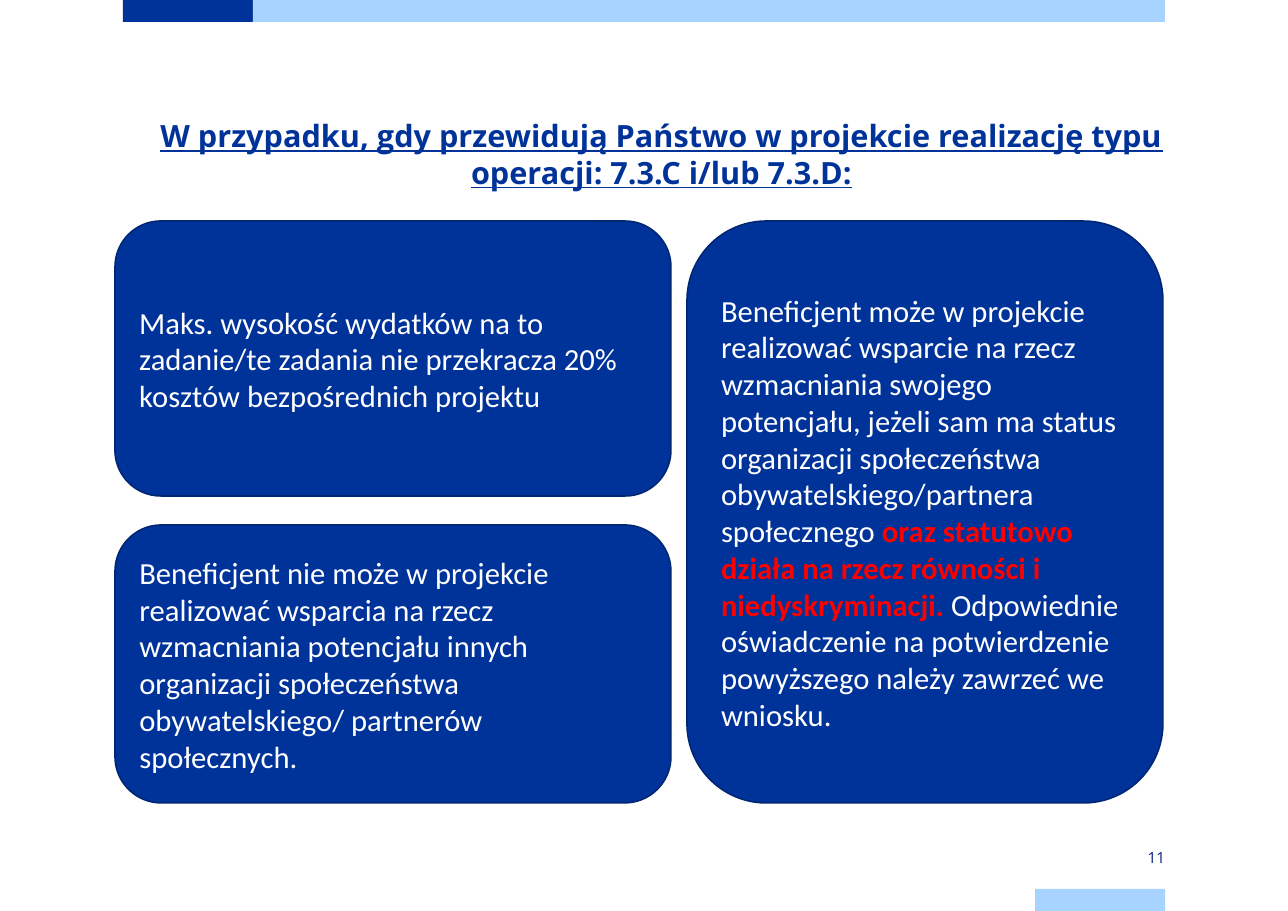
from pptx import Presentation
from pptx.dml.color import RGBColor
from pptx.enum.shapes import MSO_SHAPE
from pptx.enum.text import MSO_ANCHOR, MSO_AUTO_SIZE, PP_ALIGN
from pptx.util import Pt

RECT = MSO_SHAPE.RECTANGLE
ROUNDED = MSO_SHAPE.ROUNDED_RECTANGLE
TOP, MIDDLE = MSO_ANCHOR.TOP, MSO_ANCHOR.MIDDLE
LEFT, CENTER, RIGHT = PP_ALIGN.LEFT, PP_ALIGN.CENTER, PP_ALIGN.RIGHT

NAVY = RGBColor(0x00, 0x33, 0x99)
DARK_NAVY = RGBColor(0x00, 0x26, 0x71)
NUMBER_BLUE = RGBColor(0x00, 0x20, 0x73)
LIGHT_BLUE = RGBColor(0xA6, 0xD3, 0xFF)
WHITE = RGBColor(0xFF, 0xFF, 0xFF)
RED = RGBColor(0xFF, 0x00, 0x00)

PX = 8298  # EMU per pixel


def px(*lengths):
    return [n * PX for n in lengths]


def add_filled(kind, box, color):
    sp = slide.shapes.add_shape(kind, *px(*box))
    sp.shadow.inherit = False
    sp.fill.solid()
    sp.fill.fore_color.rgb = color
    sp.line.fill.background()
    return sp


prs = Presentation()
prs.slide_width, prs.slide_height = px(1288, 911)
slide = prs.slides.add_slide(prs.slide_layouts[5])

# Header and footer bars
for box, color in [
    ((123, 0, 130, 22), NAVY),
    ((253, 0, 912, 22), LIGHT_BLUE),
    ((1035, 889, 130, 22), LIGHT_BLUE),
]:
    add_filled(RECT, box, color)

# Page number
number = slide.shapes.add_textbox(*px(1035, 846, 130, 22))
tf = number.text_frame
tf.word_wrap = True
tf.vertical_anchor = MIDDLE
tf.margin_left = tf.margin_right = 0
tf.margin_top = tf.margin_bottom = 9 * PX
tf.text = "11"
p = tf.paragraphs[0]
p.alignment = RIGHT
font = p.runs[0].font
font.name, font.size = "Open Sans", Pt(10)
font.color.rgb = NUMBER_BLUE

# Title
title = slide.shapes.title
title.left, title.top, title.width, title.height = px(141, 117, 1041, 80)
tf = title.text_frame
tf.word_wrap = True
tf.auto_size = MSO_AUTO_SIZE.NONE
tf.vertical_anchor = TOP
tf.margin_left = tf.margin_right = tf.margin_top = tf.margin_bottom = 0
tf.text = (
    "W przypadku, gdy przewidują Państwo w projekcie realizację typu "
    "operacji: 7.3.C i/lub 7.3.D:"
)
p = tf.paragraphs[0]
p.alignment = CENTER
p.line_spacing = Pt(24)
font = p.runs[0].font
font.name, font.size = "Open Sans", Pt(20)
font.bold = font.underline = True
font.color.rgb = NAVY

# Rule cards: box and text pieces, each with a flag for emphasis
cards = [
    ((687, 221, 476, 582), [
        ("Beneficjent może w projekcie realizować wsparcie na rzecz "
         "wzmacniania swojego potencjału, jeżeli sam ma status organizacji "
         "społeczeństwa obywatelskiego/partnera społecznego ", False),
        ("oraz statutowo działa na rzecz równości i niedyskryminacji. ", True),
        ("Odpowiednie oświadczenie na potwierdzenie powyższego należy "
         "zawrzeć we wniosku.", False),
    ]),
    ((115, 221, 556, 275), [
        ("Maks. wysokość wydatków na to zadanie/te zadania nie przekracza "
         "20% kosztów bezpośrednich projektu", False),
    ]),
    ((115, 525, 556, 278), [
        ("Beneficjent nie może w projekcie realizować wsparcia na rzecz "
         "wzmacniania potencjału innych organizacji społeczeństwa "
         "obywatelskiego/ partnerów społecznych.", False),
    ]),
]
for box, pieces in cards:
    sp = add_filled(ROUNDED, box, NAVY)
    sp.line.color.rgb = DARK_NAVY
    sp.line.width = Pt(1)
    tf = sp.text_frame
    tf.word_wrap = True
    tf.vertical_anchor = MIDDLE
    p = tf.paragraphs[0]
    p.alignment = LEFT
    for text, emphasis in pieces:
        r = p.add_run()
        r.text = text
        r.font.name, r.font.size = "Calibri", Pt(20)
        r.font.bold = emphasis
        r.font.color.rgb = RED if emphasis else WHITE

prs.save("out.pptx")
